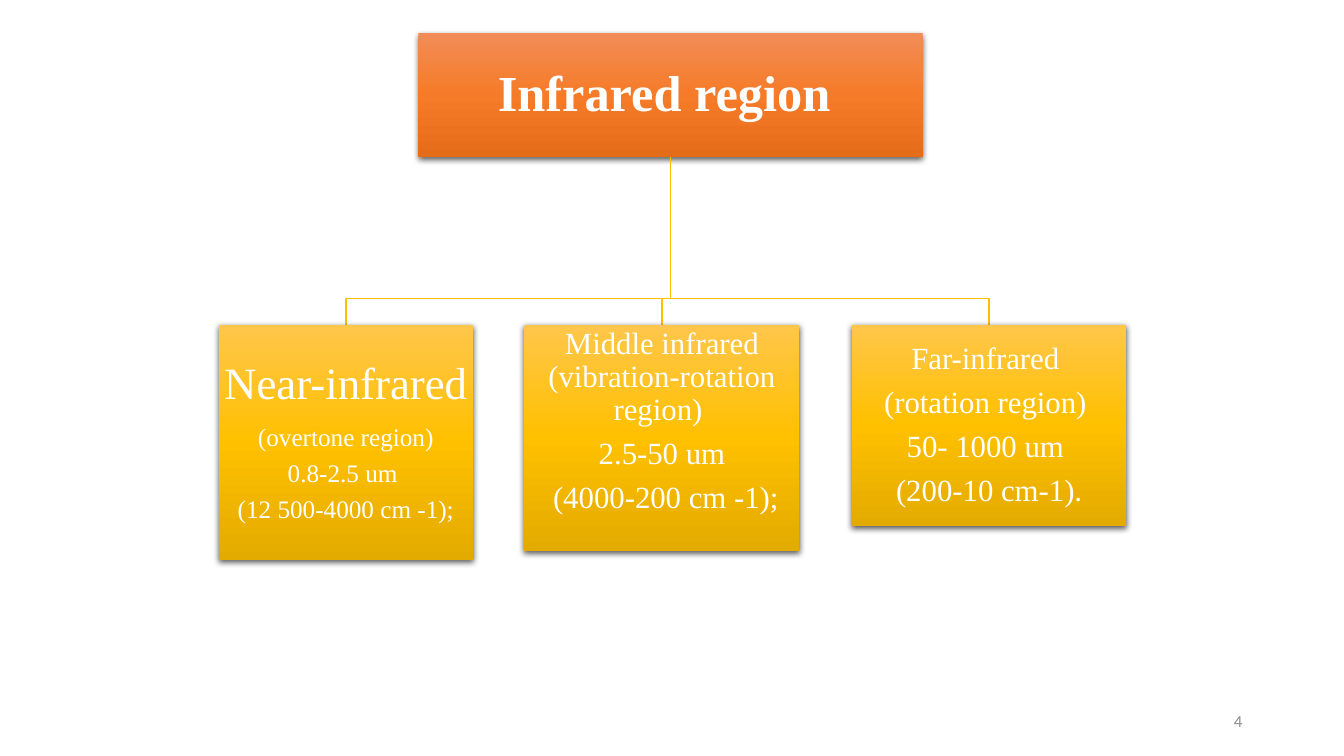
from copy import deepcopy

from pptx import Presentation
from pptx.dml.color import RGBColor
from pptx.enum.shapes import MSO_SHAPE
from pptx.enum.text import MSO_ANCHOR, MSO_AUTO_SIZE, PP_ALIGN
from pptx.oxml import parse_xml
from pptx.oxml.ns import nsdecls, qn
from pptx.util import Inches, Pt

COLORS = {"line": "FFC000", "text": "FFFFFF", "number": "8C8C8C"}
TONES = {
    "orange": ("F18C57", "F67B28", "E56C19"),
    "gold": ("FFC64B", "FFC000", "E3AB00"),
}
SHADOW = (
    f'<a:outerShdw {nsdecls("a")} blurRad="57150" dist="19050" dir="5400000" '
    'algn="ctr" rotWithShape="0"><a:srgbClr val="000000">'
    '<a:alpha val="63000"/></a:srgbClr></a:outerShdw>'
)


class Chart:
    font = "Times New Roman"

    def __init__(self, slide):
        self.shapes = slide.shapes

    def paint(self, shape, tones):
        """Give a box its three-tone vertical gradient and soft shadow."""
        shape.fill.gradient()
        stops = shape._element.spPr.find(".//" + qn("a:gsLst"))
        stops.insert(1, deepcopy(stops[0]))
        for i, (stop, tone) in enumerate(zip(shape.fill.gradient_stops, tones)):
            stop.position = i / 2
            stop.color.rgb = RGBColor.from_string(tone)
        shape.fill.gradient_angle = 270
        shape.line.fill.background()
        shape.shadow.inherit = False
        effects = shape._element.spPr.find(qn("a:effectLst"))
        effects.append(parse_xml(SHADOW))

    def label(self, shape, lines, sizes, bold=False, inset=0.02, foot=0.02):
        frame = shape.text_frame
        frame.text = "\n".join(lines)
        frame.word_wrap = True
        frame.auto_size = MSO_AUTO_SIZE.NONE
        frame.vertical_anchor = MSO_ANCHOR.MIDDLE
        frame.margin_left = frame.margin_right = frame.margin_top = Inches(inset)
        frame.margin_bottom = Inches(foot)
        for para, size in zip(frame.paragraphs, sizes):
            para.alignment = PP_ALIGN.CENTER
            para.line_spacing = 0.9
            para.space_before = Pt(0)
            para.space_after = Pt(0.35 * size)
            self.style(para, self.font, size, "text", bold)

    def style(self, para, name, size, color, bold=False):
        for run in para.runs:
            run.font.name = name
            run.font.size = Pt(size)
            run.font.bold = bold
            run.font.color.rgb = RGBColor.from_string(COLORS[color])

    def title(self, text, left, top, width, height):
        shape = self.shapes.title
        shape.left, shape.top = Inches(left), Inches(top)
        shape.width, shape.height = Inches(width), Inches(height)
        self.paint(shape, TONES["orange"])
        self.label(shape, [text], [36], bold=True, inset=0.03, foot=0.03)
        return shape

    def box(self, left, top, width, height, lines, sizes, foot):
        shape = self.shapes.add_shape(
            MSO_SHAPE.RECTANGLE,
            Inches(left), Inches(top), Inches(width), Inches(height))
        self.paint(shape, TONES["gold"])
        self.label(shape, lines, sizes, foot=foot)

    def branch(self, root, x, y, bend):
        """Draw an elbow from the root's bottom centre down to (x, y)."""
        start = root.left + root.width // 2
        outline = self.shapes.build_freeform(start, root.top + root.height)
        outline.add_line_segments(
            [(start, Inches(bend)), (Inches(x), Inches(bend)),
             (Inches(x), Inches(y))], close=False)
        elbow = outline.convert_to_shape()
        elbow.fill.background()
        elbow.line.color.rgb = RGBColor.from_string(COLORS["line"])
        elbow.line.width = Pt(1)
        elbow.shadow.inherit = False

    def number(self, text):
        shape = self.shapes.add_textbox(
            Inches(9.42), Inches(6.95), Inches(3), Inches(0.4))
        frame = shape.text_frame
        frame.text = text
        frame.word_wrap = True
        frame.vertical_anchor = MSO_ANCHOR.MIDDLE
        para = frame.paragraphs[0]
        para.alignment = PP_ALIGN.RIGHT
        self.style(para, "Calibri", 12, "number")


# left, width, height, lines, sizes, bottom inset
REGIONS = [
    (2.17, 2.52, 2.34,
     ["Near-infrared", " (overtone region) ", "0.8-2.5 um ",
      "(12 500-4000 cm -1);"], [32, 18, 18, 18], 0.02),
    (5.2, 2.73, 2.25,
     ["Middle infrared (vibration-rotation region) ", "2.5-50 um",
      " (4000-200 cm -1);"], [22] * 3, 0.35),
    (8.45, 2.72, 2,
     ["Far-infrared ", "(rotation region) ", "50- 1000 um ",
      "(200-10 cm-1)."], [22] * 4, 0.02),
]


def main():
    deck = Presentation()
    deck.slide_width, deck.slide_height = Inches(13.33), Inches(7.5)
    chart = Chart(deck.slides.add_slide(deck.slide_layouts[5]))
    root = chart.title("Infrared region ", 4.15, 0.33, 5, 1.23)
    top = 3.22
    for left, width, height, lines, sizes, foot in REGIONS:
        chart.branch(root, left + width / 2, top, bend=2.96)
        chart.box(left, top, width, height, lines, sizes, foot)
    chart.number("4")
    deck.save("out.pptx")


if __name__ == "__main__":
    main()
